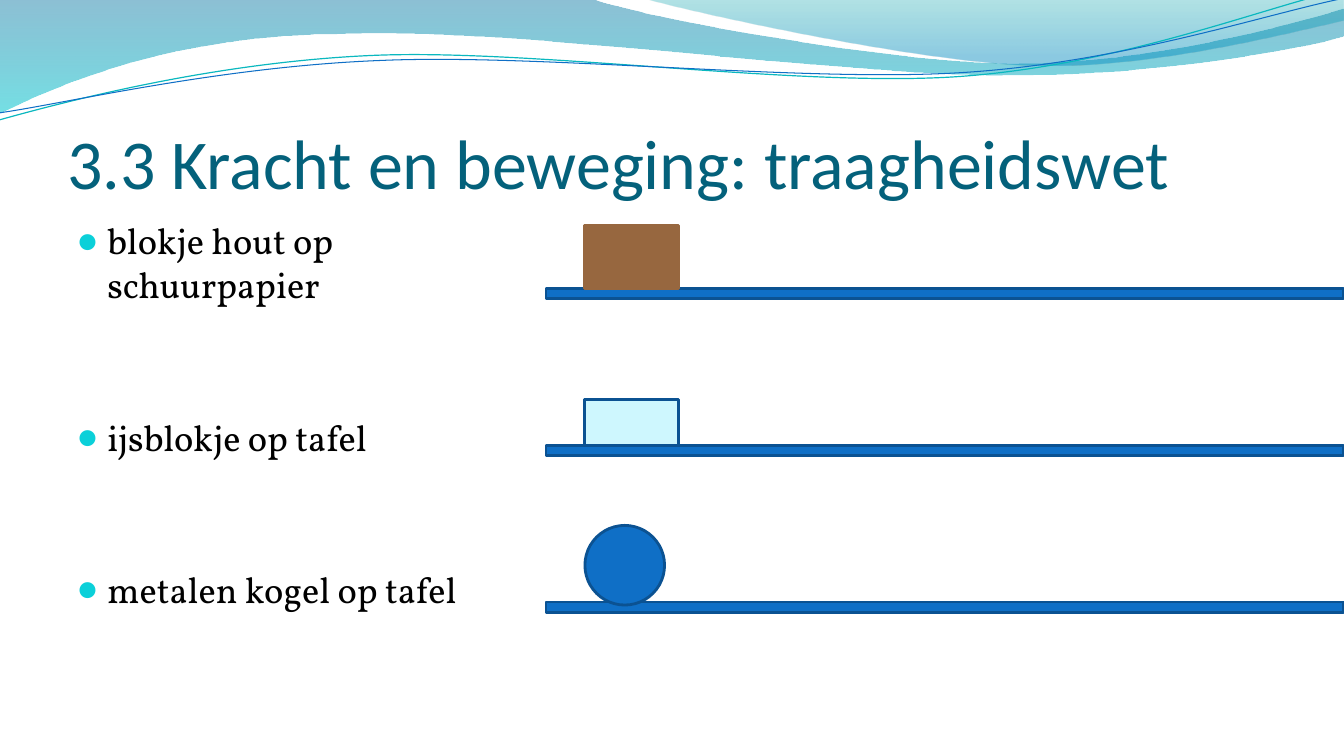
from lxml.etree import SubElement
from pptx import Presentation
from pptx.dml.color import RGBColor
from pptx.enum.shapes import MSO_SHAPE
from pptx.enum.text import MSO_ANCHOR
from pptx.oxml import parse_xml
from pptx.oxml.ns import nsdecls, qn
from pptx.util import Pt

BLUE = RGBColor(0x0F, 0x6F, 0xC6)
DARK_BLUE = RGBColor(0x0B, 0x52, 0x92)
WOOD = RGBColor(0x97, 0x67, 0x3F)
ICE = RGBColor(0xCE, 0xF7, 0xFE)
TEAL = RGBColor(0x0A, 0xB8, 0xBF)
TITLE = RGBColor(0x04, 0x61, 0x7B)
BULLET = RGBColor(0x0B, 0xD0, 0xD9)
BLACK = RGBColor(0, 0, 0)
WAVE_TOP = RGBColor(0x00, 0x74, 0xA1)
WAVE_END = RGBColor(0x00, 0xC6, 0xCF)
CREST_TOP = RGBColor(0x00, 0xA1, 0xA9)
CREST_END = RGBColor(0x00, 0x8B, 0xBF)

prs = Presentation()
prs.slide_width, prs.slide_height = Pt(960), Pt(540)
s = prs.slides.add_slide(prs.slide_layouts[6])


def add_curve(start, segments, close):
    points = [(Pt(x), Pt(y)) for seg in segments for x, y in seg]
    fb = s.shapes.build_freeform(Pt(start[0]), Pt(start[1]))
    fb.add_line_segments(points, close=close)
    sp = fb.convert_to_shape()
    sp.shadow.inherit = False
    lines = iter(list(sp._element.iter(qn("a:lnTo"))))
    for seg in segments:
        first, *rest = [next(lines) for _ in seg]
        if rest:
            first.tag = qn("a:cubicBezTo")
            for ln in rest:
                first.append(ln[0])
                ln.getparent().remove(ln)
    return sp


def add_text(left, top, width, height):
    tf = s.shapes.add_textbox(Pt(left), Pt(top), Pt(width), Pt(height)).text_frame
    tf.word_wrap = True
    return tf


waves = [
    ((0, -0.7), [
        [(422.6, -0.7)],
        [(456.5, 12.2), (637.2, 45.4), (727.9, 45.4)],
        [(819.4, 45.4), (920.2, 18.7), (959.8, 6.5)],
        [(961.2, 25.9)],
        [(944, 31.7), (835.2, 54.7), (715.7, 54)],
        [(596.9, 54), (366.5, 20.2), (247, 24.5)],
        [(123.1, 25.2), (43.9, 59.8), (-0.7, 81.4)],
    ], [(0, WAVE_TOP, 45), (100, WAVE_END, 55)]),
    ((460, -0.7), [
        [(488.9, 7.9), (654.5, 44.6), (738, 46.8)],
        [(821.5, 49.7), (923, 23), (959.8, 15.1)],
        [(959.8, 0)],
    ], [(0, CREST_TOP, 30), (80, CREST_END, 45)]),
]
for start, segments, stops in waves:
    sp = add_curve(start, segments, True)
    sp.line.fill.background()
    gs = "".join(
        f'<a:gs pos="{pos * 1000}"><a:srgbClr val="{color}">'
        f'<a:alpha val="{alpha * 1000}"/></a:srgbClr></a:gs>'
        for pos, color, alpha in stops)
    sp._element.spPr.find(qn("a:custGeom")).addnext(parse_xml(
        f'<a:gradFill {nsdecls("a")}><a:gsLst>{gs}</a:gsLst>'
        '<a:lin ang="5400000" scaled="0"/></a:gradFill>'))

ripples = [
    ((-2.3, 63.1), [
        [(45.1, 52.3), (152.1, 29.2), (266, 29.6)],
        [(379.8, 29.9), (567.7, 66.8), (683.1, 64.4)],
        [(798.6, 61.9), (902.6, 25.7), (960.1, 15.4)],
    ], TEAL, 0.85),
    ((-1.3, 57.9), [
        [(44.4, 53.7), (157.1, 32.3), (272.4, 33.4)],
        [(386.9, 33.8), (572.2, 63.4), (686.9, 61.6)],
        [(802.3, 59.8), (904.7, 30.1), (962, 21.3)],
    ], BLUE, 0.75),
]
for start, segments, color, weight in ripples:
    sp = add_curve(start, segments, False)
    sp.rotation = 357.3
    sp.fill.background()
    sp.line.color.rgb = color
    sp.line.width = Pt(weight)

tf = add_text(48, 55.4, 864, 90)
tf.margin_left = tf.margin_right = tf.margin_bottom = 0
tf.vertical_anchor = MSO_ANCHOR.BOTTOM
r = tf.paragraphs[0].add_run()
r.text = "3.3 Kracht en beweging: traagheidswet"
r.font.name, r.font.size, r.font.color.rgb = "Calibri", Pt(50), TITLE

tf = add_text(48, 152.6, 300, 345.6)
items = ["blokje hout op schuurpapier", "ijsblokje op tafel", "metalen kogel op tafel"]
for i, item in enumerate(items):
    p = tf.add_paragraph() if i else tf.paragraphs[0]
    p.space_before = Pt(77.7 if i else 5.2)
    pPr = p._p.get_or_add_pPr()
    pPr.set("marL", str(Pt(21.6)))
    pPr.set("indent", str(-Pt(21.6)))
    SubElement(SubElement(pPr, qn("a:buClr")), qn("a:srgbClr"), val=str(BULLET))
    SubElement(pPr, qn("a:buSzPct"), val="95000")
    SubElement(pPr, qn("a:buFont"), typeface="Calibri")
    SubElement(pPr, qn("a:buChar"), char="●")
    r = p.add_run()
    r.text = item
    r.font.name, r.font.size, r.font.color.rgb = "Vollkorn", Pt(26), BLACK

planks = [(MSO_SHAPE.RECTANGLE, 390, 206 + 112 * i, 569.6, 7.4, BLUE, DARK_BLUE) for i in range(3)]
objects = [
    (MSO_SHAPE.RECTANGLE, 417.8, 160.8, 67, 45.4, WOOD, WOOD),
    (MSO_SHAPE.RECTANGLE, 417.8, 285.1, 67, 33.1, ICE, DARK_BLUE),
    (MSO_SHAPE.OVAL, 417.8, 375.3, 56.9, 56.9, BLUE, DARK_BLUE),
]
for kind, left, top, width, height, fill, line in planks + objects:
    sp = s.shapes.add_shape(kind, Pt(left), Pt(top), Pt(width), Pt(height))
    sp.shadow.inherit = False
    sp.fill.solid()
    sp.fill.fore_color.rgb = fill
    sp.line.color.rgb = line
    sp.line.width = Pt(2)

prs.save("out.pptx")
